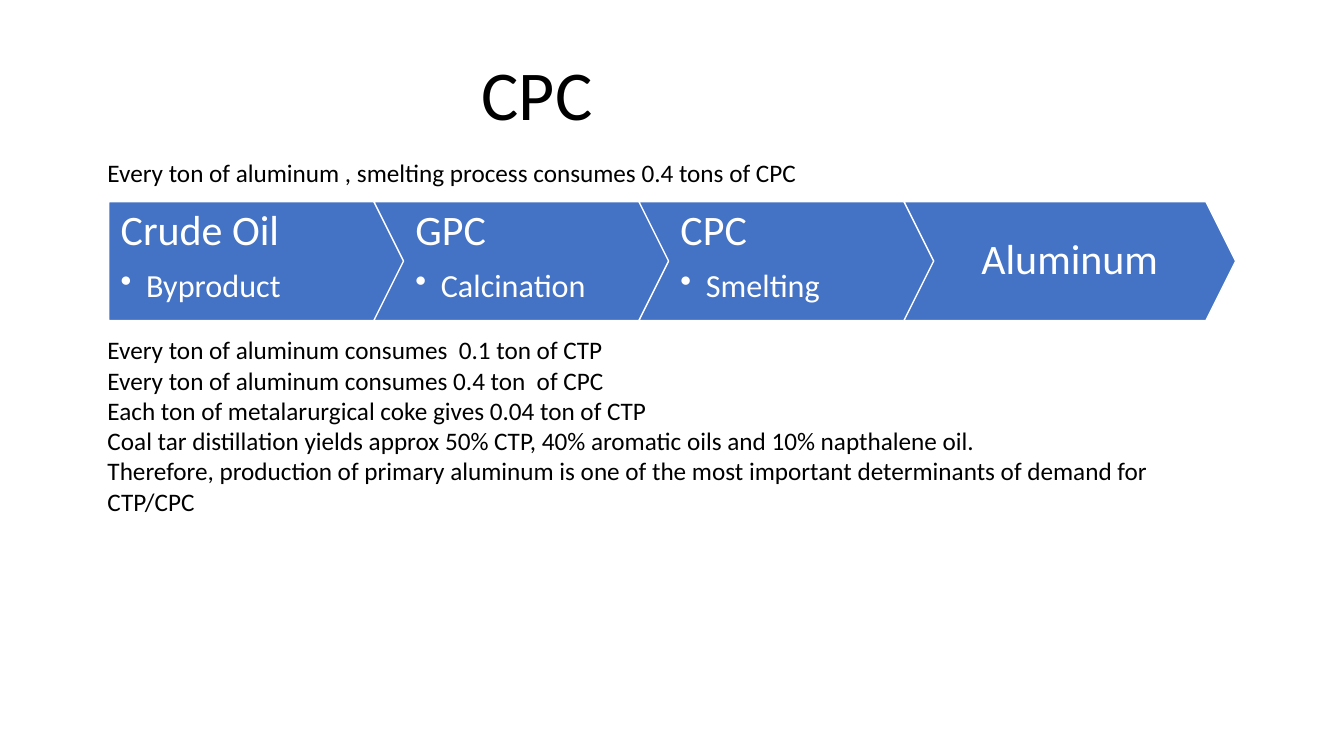
from dataclasses import dataclass
from typing import Any

from lxml import etree
from pptx import Presentation
from pptx.dml.color import RGBColor
from pptx.enum.shapes import MSO_SHAPE
from pptx.enum.text import MSO_ANCHOR, MSO_AUTO_SIZE, PP_ALIGN
from pptx.oxml.ns import qn
from pptx.util import Cm, Pt

PENTAGON = MSO_SHAPE.PENTAGON
CHEVRON = MSO_SHAPE.CHEVRON
TOP, MIDDLE = MSO_ANCHOR.TOP, MSO_ANCHOR.MIDDLE
LEFT, CENTER = PP_ALIGN.LEFT, PP_ALIGN.CENTER
GROW = MSO_AUTO_SIZE.SHAPE_TO_FIT_TEXT

FONT = "Calibri"
BLUE, WHITE, BLACK = "4472C4", "FFFFFF", "000000"

CHAIN_LEFT, CHAIN_TOP = 2.74, 5.08
STEP_WIDTH, STEP_HEIGHT, STEP_PITCH = 8.36, 3.0, 6.68
NOTCH = STEP_HEIGHT / 4


@dataclass(frozen=True)
class Step:
    name: str
    process: str = ""


@dataclass(frozen=True)
class Passage:
    left: float
    top: float
    width: float
    height: float
    lines: tuple[str, ...]
    size: float = 18
    indent: float = 0


STEPS = (
    Step("Crude Oil", "Byproduct"),
    Step("GPC", "Calcination"),
    Step("CPC", "Smelting"),
    Step("Aluminum"),
)

PASSAGES = (
    Passage(2.46, 3.84, 27.3, 1.02, (
        "Every ton of aluminum , smelting process consumes 0.4 tons of CPC",
    )),
    Passage(2.46, 8.31, 27.0, 4.88, (
        "Every ton of aluminum consumes  0.1 ton of CTP",
        "Every ton of aluminum consumes 0.4 ton  of CPC",
        "Each ton of metalarurgical coke gives 0.04 ton of CTP",
        "Coal tar distillation yields approx 50% CTP, 40% aromatic oils and 10% napthalene oil.",
        "Therefore, production of primary aluminum is one of the most important "
        "determinants of demand for CTP/CPC",
    )),
    Passage(1.85, 1.14, 28.42, 2.39, ("CPC",), 50, 10.04),
)


def color(value: str) -> RGBColor:
    return RGBColor.from_string(value)


def apply(target: Any, values: dict[str, Any]) -> None:
    for attribute, value in values.items():
        setattr(target, attribute, value)


def write(paragraph: Any, text: str, size: float, ink: str, layout: dict[str, Any]) -> None:
    run = paragraph.add_run()
    run.text = text
    apply(run.font, {"name": FONT, "size": Pt(size)})
    run.font.color.rgb = color(ink)
    apply(paragraph, layout)


def indent(paragraph: Any, margin: float, first: float = 0) -> Any:
    properties = paragraph._p.get_or_add_pPr()
    properties.set("marL", str(Cm(margin)))
    properties.set("indent", str(Cm(first)))
    return properties


def bullet(paragraph: Any) -> None:
    properties = indent(paragraph, 0.64, -0.64)
    etree.SubElement(properties, qn("a:buChar")).set("char", "•")


def draw_step(slide: Any, step: Step, position: int) -> None:
    first = position == 0
    left = CHAIN_LEFT + position * STEP_PITCH
    arrow = slide.shapes.add_shape(
        PENTAGON if first else CHEVRON,
        Cm(left), Cm(CHAIN_TOP), Cm(STEP_WIDTH), Cm(STEP_HEIGHT))
    arrow.adjustments[0] = 0.25
    arrow.shadow.inherit = False
    arrow.fill.solid()
    arrow.fill.fore_color.rgb = color(BLUE)
    arrow.line.color.rgb = color(WHITE)
    arrow.line.width = Pt(1)

    label_left = left if first else left + NOTCH
    label_width = STEP_WIDTH - NOTCH / 2 if first else STEP_WIDTH - 2 * NOTCH
    label = slide.shapes.add_textbox(
        Cm(label_left), Cm(CHAIN_TOP), Cm(label_width), Cm(STEP_HEIGHT)).text_frame
    apply(label, {
        "word_wrap": True,
        "vertical_anchor": TOP if step.process else MIDDLE,
        "margin_left": Cm(0.3),
        "margin_right": Cm(1.17 if first else 0.3),
        "margin_top": Cm(0.2),
        "margin_bottom": Cm(0.2),
    })
    write(label.paragraphs[0], step.name, 30, WHITE, {
        "alignment": LEFT if step.process else CENTER,
        "line_spacing": 0.9,
        "space_after": Pt(10.5),
    })
    if step.process:
        process = label.add_paragraph()
        write(process, step.process, 23, WHITE, {
            "level": 1, "line_spacing": 0.9, "space_after": Pt(3.5)})
        bullet(process)


def draw_passage(slide: Any, passage: Passage) -> None:
    frame = slide.shapes.add_textbox(
        Cm(passage.left), Cm(passage.top),
        Cm(passage.width), Cm(passage.height)).text_frame
    apply(frame, {"word_wrap": True, "auto_size": GROW})
    for number, line in enumerate(passage.lines):
        paragraph = frame.add_paragraph() if number else frame.paragraphs[0]
        write(paragraph, line, passage.size, BLACK, {"alignment": LEFT})
        if passage.indent:
            indent(paragraph, passage.indent)


def main() -> None:
    deck = Presentation()
    apply(deck, {"slide_width": Cm(33.87), "slide_height": Cm(19.05)})
    slide = deck.slides.add_slide(deck.slide_layouts[6])
    for position, step in enumerate(STEPS):
        draw_step(slide, step, position)
    for passage in PASSAGES:
        draw_passage(slide, passage)
    deck.save("out.pptx")


if __name__ == "__main__":
    main()
